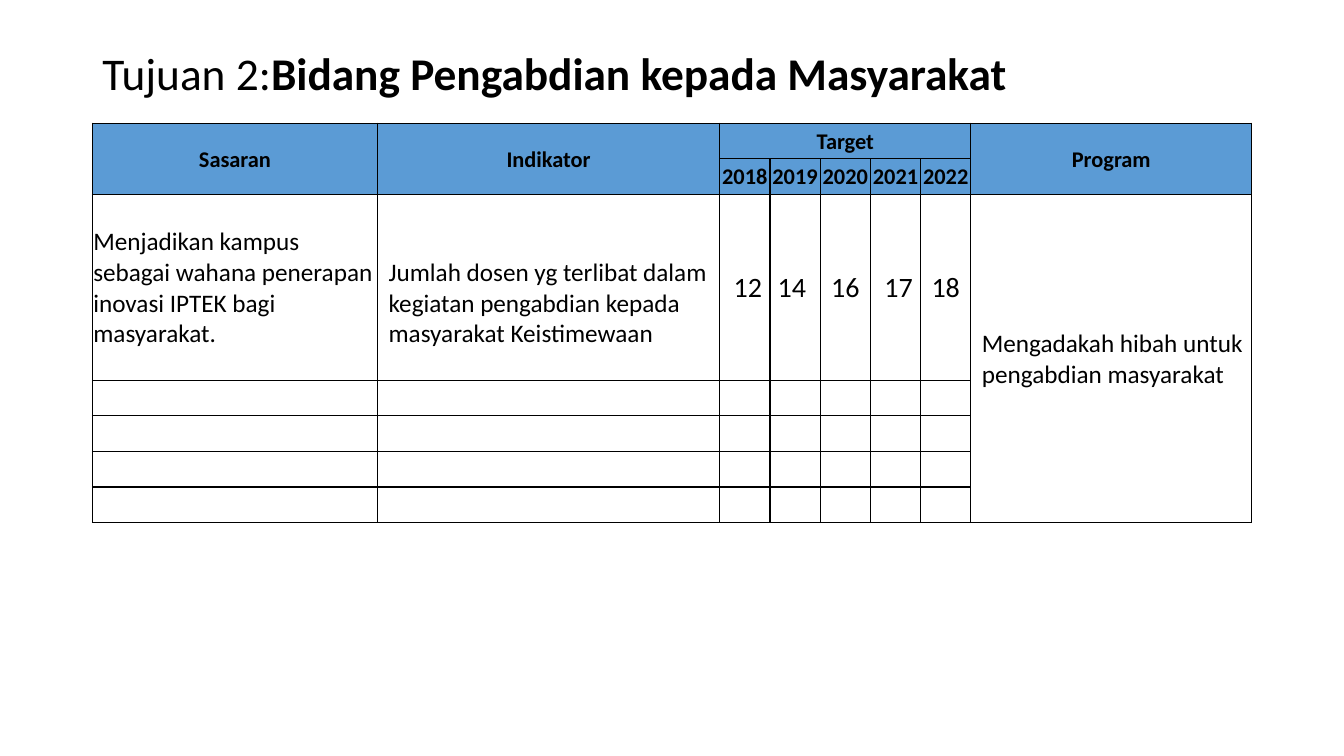
"""Build the community service target table slide."""
import lxml.etree
import pptx
import pptx.dml.color
import pptx.enum.text
import pptx.oxml.ns
import pptx.util

Pt = pptx.util.Pt
ALIGN = pptx.enum.text.PP_ALIGN
ANCHOR = pptx.enum.text.MSO_ANCHOR


def color(hex_string):
    return pptx.dml.color.RGBColor.from_string(hex_string)


def add_span(para, text, size, bold=False):
    span = para.add_run()
    span.text = text
    for name, value in {"name": "Calibri", "size": Pt(size), "bold": bold}.items():
        setattr(span.font, name, value)
    span.font.color.rgb = color("000000")


deck = pptx.Presentation()
deck.slide_width, deck.slide_height = Pt(960), Pt(540)
page = deck.slides.add_slide(deck.slide_layouts[6])

title = page.shapes.add_textbox(Pt(66), Pt(28.8), Pt(828), Pt(51)).text_frame
title.word_wrap = True
title.vertical_anchor = ANCHOR.MIDDLE
title.paragraphs[0].line_spacing = 0.9
add_span(title.paragraphs[0], "Tujuan 2:", 32.4)
add_span(title.paragraphs[0], "Bidang Pengabdian kepada Masyarakat", 32.4, True)

column_widths = [203.7, 244.4] + [35.9] * 5 + [200.6]
row_heights = [25.4] * 2 + [132.8] + [25.4] * 4
frame = page.shapes.add_table(
    len(row_heights), len(column_widths), Pt(66), Pt(88.1),
    Pt(sum(column_widths)), Pt(sum(row_heights)))
table = frame.table
table.first_row = table.horz_banding = False
for column, width in zip(table.columns, column_widths):
    column.width = Pt(width)
for row, height in zip(table.rows, row_heights):
    row.height = Pt(height)

for cell in table.iter_cells():
    for side in ("a:lnL", "a:lnR", "a:lnT", "a:lnB"):
        line = lxml.etree.SubElement(
            cell._tc.get_or_add_tcPr(), pptx.oxml.ns.qn(side), w=str(Pt(1)))
        fill = lxml.etree.SubElement(line, pptx.oxml.ns.qn("a:solidFill"))
        lxml.etree.SubElement(fill, pptx.oxml.ns.qn("a:srgbClr"), val="000000")
    cell.fill.background()
    margins = {"margin_left": 0.7, "margin_right": 0.7, "margin_top": 0.7, "margin_bottom": 0}
    for name, value in margins.items():
        setattr(cell, name, Pt(value))
    cell.vertical_anchor = ANCHOR.MIDDLE

for top, left, bottom, right in [
        (0, 0, 1, 0), (0, 1, 1, 1), (0, 2, 0, 6), (0, 7, 1, 7), (2, 7, 6, 7)]:
    table.cell(top, left).merge(table.cell(bottom, right))

headings = {(0, 0): "Sasaran", (0, 1): "Indikator", (0, 2): "Target", (0, 7): "Program"}
headings.update({(1, 2 + index): str(2018 + index) for index in range(5)})
for (row, column), text in headings.items():
    cell = table.cell(row, column)
    cell.fill.solid()
    cell.fill.fore_color.rgb = color("5B9BD5")
    para = cell.text_frame.paragraphs[0]
    para.alignment = ALIGN.CENTER
    add_span(para, text, 16, True)

descriptions = [
    (0, "Menjadikan kampus sebagai wahana penerapan inovasi IPTEK bagi masyarakat.", 0.7, True),
    (1, "Jumlah dosen yg terlibat dalam kegiatan pengabdian kepada masyarakat Keistimewaan", 7.9, True),
    (7, "Mengadakah hibah untuk pengabdian masyarakat", 7.9, False),
]
for column, text, left_margin, at_bottom in descriptions:
    cell = table.cell(2, column)
    cell.margin_left = Pt(left_margin)
    if at_bottom:
        cell.vertical_anchor = ANCHOR.BOTTOM
        cell.margin_bottom = Pt(22)
    add_span(cell.text_frame.paragraphs[0], text, 18)

targets = [("12", 5.2, 0.7), ("14", 0.7, 5.2), ("16", 0.7, 0.7), ("17", 5.2, 0.7), ("18", 0.7, 0.7)]
for column, (text, left_margin, right_margin) in enumerate(targets, start=2):
    cell = table.cell(2, column)
    cell.margin_left, cell.margin_right = Pt(left_margin), Pt(right_margin)
    para = cell.text_frame.paragraphs[0]
    para.alignment = ALIGN.CENTER
    add_span(para, text, 20)

deck.save("out.pptx")
